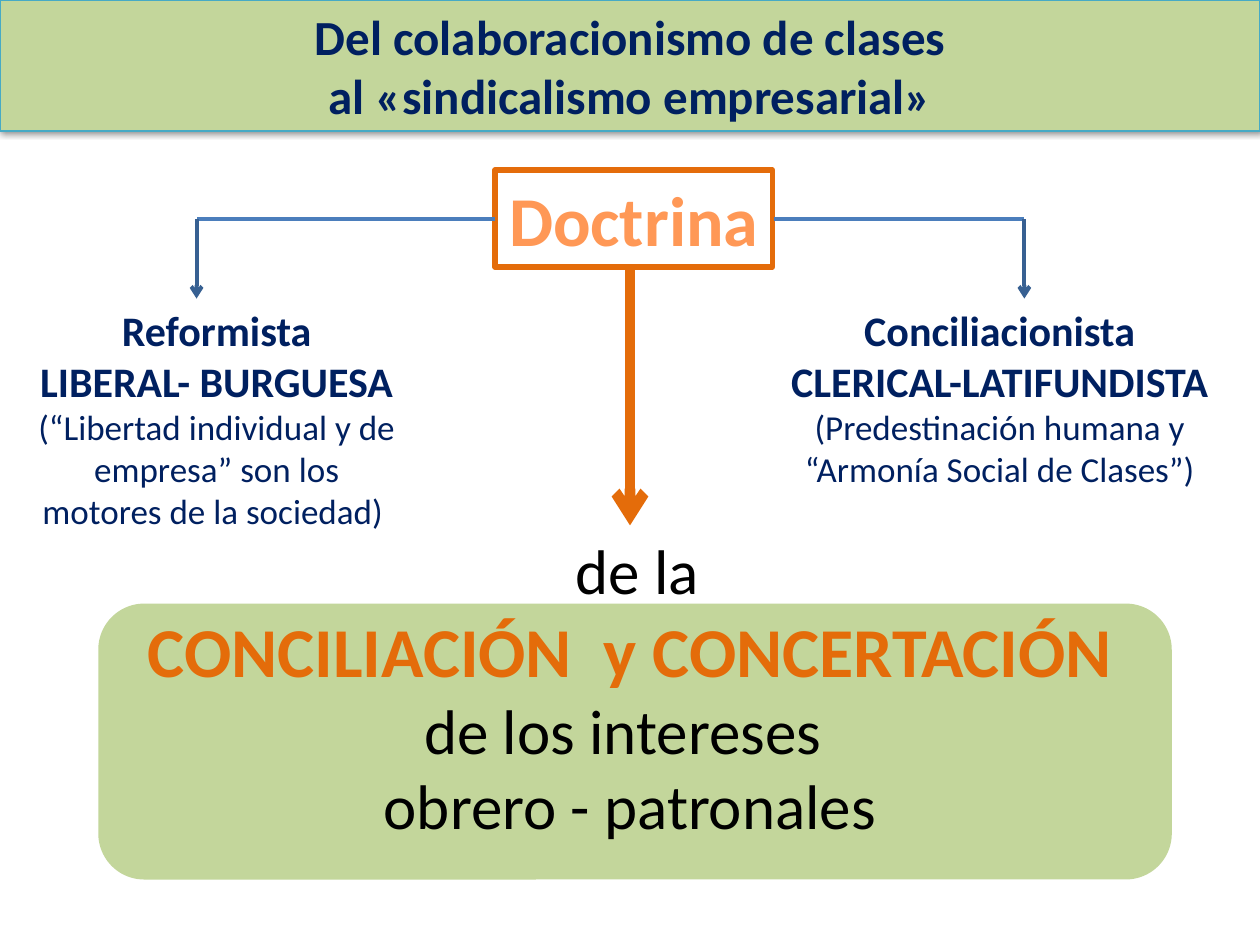
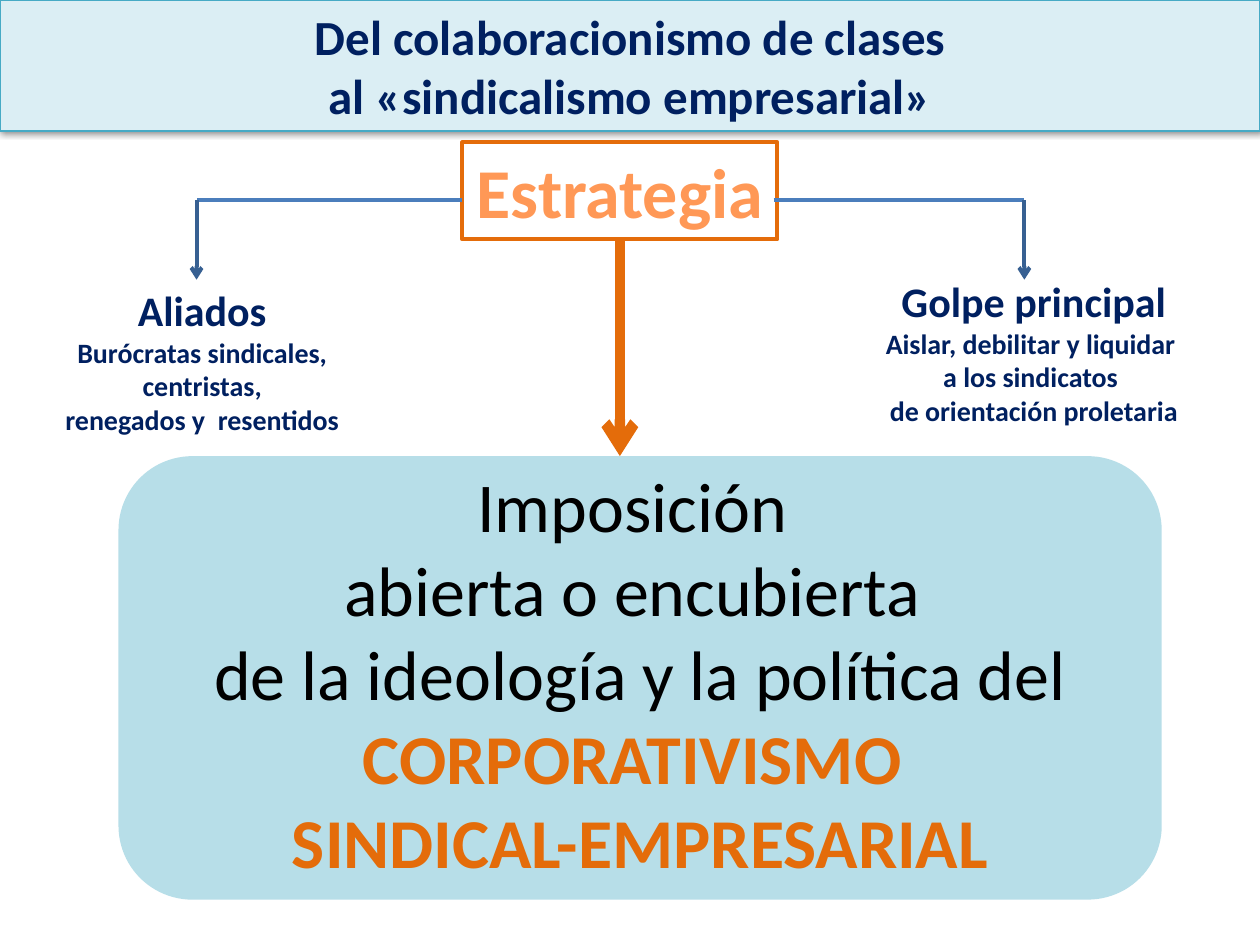
from lxml import etree
from pptx import Presentation
from pptx.dml.color import RGBColor
from pptx.enum.shapes import MSO_CONNECTOR, MSO_SHAPE
from pptx.enum.text import MSO_ANCHOR, PP_ALIGN
from pptx.oxml.ns import qn
from pptx.util import Inches, Pt

RECT, ROUNDED = MSO_SHAPE.RECTANGLE, MSO_SHAPE.ROUNDED_RECTANGLE
STRAIGHT = MSO_CONNECTOR.STRAIGHT
CENTER, MIDDLE = PP_ALIGN.CENTER, MSO_ANCHOR.MIDDLE
FONT = "Calibri"
NAVY, ORANGE, PEACH, BLACK = "002060", "E46C0A", "FF9856", "000000"
BRANCH, DROP, BAND_EDGE = "4B7EBC", "376092", "46AAC5"
TITLE = ["Del colaboracionismo de clases", "al «sindicalismo empresarial»"]
LEFT_DROP, RIGHT_START, RIGHT_DROP = 1.56, 6.14, 8.13

color = RGBColor.from_string
prs = Presentation()
prs.slide_width, prs.slide_height = Inches(10), Inches(7.5)
COL = prs.slide_width / 10
ROW = prs.slide_height / 7.5


def add_block(slide, box, lines=(), kind=None, fill=None, edge=None, edge_width=0, wrap=True):
    left, top, width, height = box
    place = int(left * COL), int(top * ROW), int(width * COL), int(height * ROW)
    if kind is None:
        block = slide.shapes.add_textbox(*place)
    else:
        block = slide.shapes.add_shape(kind, *place)
        block.shadow.inherit = False
        if fill:
            block.fill.solid()
            block.fill.fore_color.rgb = color(fill)
        else:
            block.fill.background()
        if edge:
            block.line.color.rgb = color(edge)
            block.line.width = Pt(edge_width)
        else:
            block.line.fill.background()
        block.text_frame.vertical_anchor = MIDDLE
    frame = block.text_frame
    frame.word_wrap = wrap
    if lines:
        frame.text = "\n".join(line[0] for line in lines)
        for paragraph, (_, size, ink, bold) in zip(frame.paragraphs, lines):
            paragraph.alignment = CENTER
            font = paragraph.runs[0].font
            font.name, font.size, font.bold = FONT, Pt(size), bold
            font.color.rgb = color(ink)
    return block


def add_line(slide, start, end, ink, width, arrow=False):
    line = slide.shapes.add_connector(
        STRAIGHT, int(start[0] * COL), int(start[1] * ROW), int(end[0] * COL), int(end[1] * ROW))
    line.line.color.rgb = color(ink)
    line.line.width = Pt(width)
    properties = line._element.spPr
    if arrow:
        etree.SubElement(properties.find(qn("a:ln")), qn("a:tailEnd"), type="arrow")
    etree.SubElement(properties, qn("a:effectLst"))


topics = [
    {
        "band": "C3D69B", "panel": "C3D69B", "panel_box": (0.78, 4.79, 8.52, 2.19),
        "heading": "Doctrina", "heading_box": (3.93, 1.35, 2.2, 0.77), "heading_edge": 3,
        "branch_y": 1.74, "drop_y": 2.37, "arrow_x": 5, "arrow_end": 4.17,
        "sides": [
            ((0, 2.37, 3.44, 1.92), [
                ("Reformista", 24, NAVY, True),
                ("LIBERAL- BURGUESA", 24, NAVY, True),
                ("(“Libertad individual y de empresa” son los", 20, NAVY, False),
                ("motores de la sociedad) ", 20, NAVY, False)]),
            ((6.02, 2.37, 3.83, 1.58), [
                ("Conciliacionista", 24, NAVY, True),
                ("CLERICAL-LATIFUNDISTA", 24, NAVY, True),
                ("(Predestinación humana y", 20, NAVY, False),
                ("“Armonía Social de Clases”)", 20, NAVY, False)]),
        ],
        "goal_box": (0.86, 4.17, 8.28, 2.59),
        "goal": [
            (" de la", 36, BLACK, False),
            ("CONCILIACIÓN  y CONCERTACIÓN", 40, ORANGE, True),
            ("de los intereses ", 36, BLACK, False),
            ("obrero - patronales", 36, BLACK, False)],
    },
    {
        "band": "DBEEF4", "panel": "B7DEE8", "panel_box": (0.94, 3.62, 8.28, 3.52),
        "heading": "Estrategia", "heading_box": (3.67, 1.13, 2.5, 0.77), "heading_edge": 2.25,
        "branch_y": 1.59, "drop_y": 2.22, "arrow_x": 4.92, "arrow_end": 3.62,
        "sides": [
            ((0.08, 2.21, 3.05, 1.31), [
                ("Aliados", 24, NAVY, True),
                ("Burócratas sindicales, centristas,", 16, NAVY, True),
                ("renegados y  resentidos", 16, NAVY, True)]),
            ((6.8, 2.14, 2.81, 1.31), [
                ("Golpe principal", 24, NAVY, True),
                ("Aislar, debilitar y liquidar ", 16, NAVY, True),
                ("a los sindicatos ", 16, NAVY, True),
                ("de orientación proletaria", 16, NAVY, True)]),
        ],
        "goal_box": (0.94, 3.62, 8.28, 3.47),
        "goal": [
            ("Imposición ", 40, BLACK, False),
            ("abierta o encubierta ", 40, BLACK, False),
            ("de la ideología y la política del", 40, BLACK, False),
            ("CORPORATIVISMO ", 40, ORANGE, True),
            ("SINDICAL-EMPRESARIAL", 40, ORANGE, True)],
    },
]

for topic in topics:
    slide = prs.slides.add_slide(prs.slide_layouts[6])
    add_block(slide, topic["panel_box"], kind=ROUNDED, fill=topic["panel"])
    add_block(slide, topic["goal_box"], topic["goal"])
    for side_box, side_lines in topic["sides"]:
        add_block(slide, side_box, side_lines)

    heading_left, heading_top, _, heading_height = topic["heading_box"]
    add_block(slide, topic["heading_box"], [(topic["heading"], 40, PEACH, True)],
              RECT, edge=ORANGE, edge_width=topic["heading_edge"], wrap=False)

    branch_y = topic["branch_y"]
    for inner, outer in ((heading_left, LEFT_DROP), (RIGHT_START, RIGHT_DROP)):
        add_line(slide, (inner, branch_y), (outer, branch_y), BRANCH, 2.25)
        add_line(slide, (outer, branch_y), (outer, topic["drop_y"]), DROP, 2.25, arrow=True)
    add_line(slide, (topic["arrow_x"], heading_top + heading_height),
             (topic["arrow_x"], topic["arrow_end"]), ORANGE, 6, arrow=True)

    band = add_block(slide, (0, 0, 10, 1.04), [(text, 28, NAVY, True) for text in TITLE],
                     RECT, topic["band"], BAND_EDGE, 0.75)
    shadow = etree.SubElement(band._element.spPr.find(qn("a:effectLst")), qn("a:outerShdw"),
                              blurRad="40000", dist="20000", dir="5400000", rotWithShape="0")
    shade = etree.SubElement(shadow, qn("a:srgbClr"), val=BLACK)
    etree.SubElement(shade, qn("a:alpha"), val="38000")

prs.save("out.pptx")
